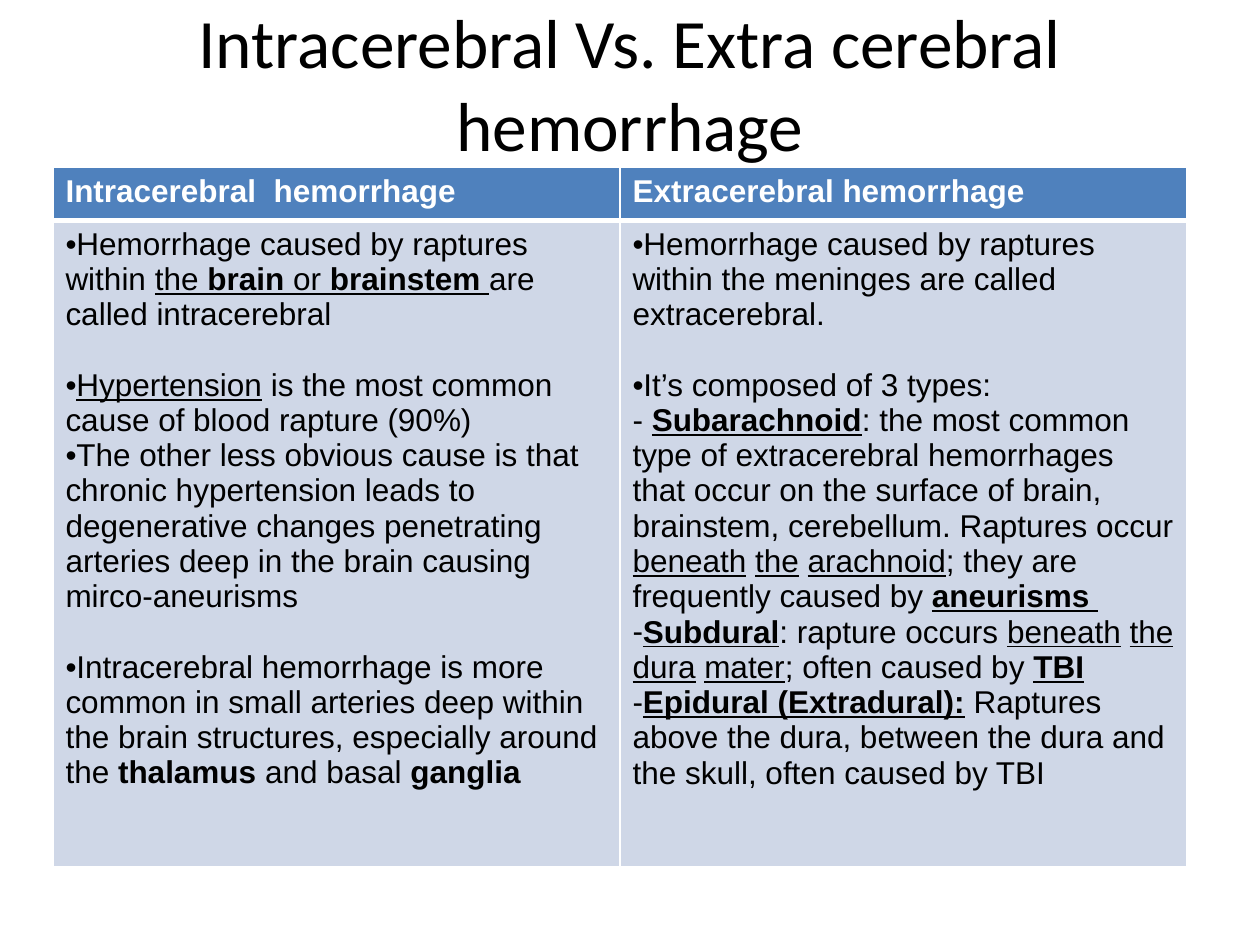
from lxml import etree
from pptx import Presentation
from pptx.dml.color import RGBColor
from pptx.enum.text import MSO_ANCHOR, PP_ALIGN
from pptx.oxml.ns import qn
from pptx.util import Inches, Pt

CENTER, MIDDLE = PP_ALIGN.CENTER, MSO_ANCHOR.MIDDLE
BLACK = RGBColor(0, 0, 0)
WHITE = RGBColor(255, 255, 255)
BLUE = RGBColor(0x4F, 0x81, 0xBD)
PALE = RGBColor(0xCF, 0xD7, 0xE7)

TITLE = "Intracerebral Vs. Extra cerebral hemorrhage"
HEADERS = ["Intracerebral  hemorrhage", "Extracerebral hemorrhage"]

# Each paragraph: bullet, gap before in points, runs of (text, style letters)
INTRACEREBRAL = [
    ("•", 0, [("Hemorrhage caused by raptures within ", ""), ("the ", "u"),
              ("brain", "bu"), (" or ", "u"), ("brainstem", "bu"), (" ", "u"),
              ("are called intracerebral", "")]),
    ("•", 20, [("Hypertension", "u"),
               (" is the most common cause of blood rapture (90%)", "")]),
    ("•", 0, [("The other less obvious cause is that chronic hypertension leads to "
               "degenerative changes penetrating arteries deep in the brain causing "
               "mirco-aneurisms", "")]),
    ("•", 20, [("Intracerebral hemorrhage is more common in small arteries deep within "
                "the brain structures, especially around the ", ""),
               ("thalamus", "b"), (" and basal ", ""), ("ganglia", "b")]),
]
EXTRACEREBRAL = [
    ("•", 0, [("Hemorrhage caused by raptures within the meninges are called "
               "extracerebral.", "")]),
    ("•", 20, [("It’s composed of 3 types:", ""), ("\n", ""), ("- ", ""),
               ("Subarachnoid", "bu"),
               (": the most common type of extracerebral hemorrhages that occur on the "
                "surface of brain, brainstem, cerebellum. Raptures occur ", ""),
               ("beneath", "u"), (" ", ""), ("the", "u"), (" ", ""), ("arachnoid", "u"),
               ("; they are frequently caused by ", ""), ("aneurisms ", "bu")]),
    ("-", 0, [("Subdural", "bu"), (": rapture occurs ", ""), ("beneath", "u"), (" ", ""),
              ("the", "u"), (" ", ""), ("dura", "u"), (" ", ""), ("mater", "u"),
              ("; often caused by ", ""), ("TBI", "bu")]),
    ("-", 0, [("Epidural (Extradural):", "bu"),
              (" Raptures above the dura, between the dura and the skull, often caused "
               "by TBI", "")]),
]
ROW_HEIGHTS = [0.42, 5.13]
COLUMN_WIDTH = 4.5


def style(font, name, size, color, letters=""):
    font.name, font.size, font.color.rgb = name, Pt(size), color
    font.bold, font.underline = "b" in letters, "u" in letters


def set_cell(cell, fill, top, bottom):
    tc_pr = cell._tc.get_or_add_tcPr()
    for side, width in (("L", 1), ("R", 1), ("T", top), ("B", bottom)):
        line = etree.SubElement(tc_pr, qn(f"a:ln{side}"), w=str(Pt(width)))
        solid = etree.SubElement(line, qn("a:solidFill"))
        etree.SubElement(solid, qn("a:srgbClr"), val=str(WHITE))
    cell.fill.solid()
    cell.fill.fore_color.rgb = fill


def add_bullet(p, char):
    p_pr = p._p.get_or_add_pPr()
    p_pr.set("marL", "0")
    p_pr.set("indent", str(Inches(-0.12)))
    color = etree.SubElement(p_pr, qn("a:buClr"))
    etree.SubElement(color, qn("a:srgbClr"), val=str(BLACK))
    etree.SubElement(p_pr, qn("a:buFont"), typeface="Arial")
    etree.SubElement(p_pr, qn("a:buChar"), char=char)


def write_body(tf, paragraphs):
    for i, (bullet, gap, runs) in enumerate(paragraphs):
        p = tf.add_paragraph() if i else tf.paragraphs[0]
        add_bullet(p, bullet)
        if gap:
            p.space_before = Pt(gap)
        for text, letters in runs:
            if text == "\n":
                p.add_line_break()
                continue
            r = p.add_run()
            r.text = text
            style(r.font, "Arial", 18, BLACK, letters)


prs = Presentation()
prs.slide_width, prs.slide_height = Inches(10), Inches(7.5)
s = prs.slides.add_slide(prs.slide_layouts[6])

tf = s.shapes.add_textbox(Inches(0.5), Inches(0.3), Inches(9), Inches(0.7)).text_frame
tf.word_wrap = True
tf.vertical_anchor = MIDDLE
tf.text = TITLE
tf.paragraphs[0].alignment = CENTER
style(tf.paragraphs[0].runs[0].font, "Calibri", 39.6, BLACK)

table = s.shapes.add_table(2, 2, Inches(0.42), Inches(1.33), Inches(2 * COLUMN_WIDTH),
                           Inches(sum(ROW_HEIGHTS))).table
for row, height in zip(table.rows, ROW_HEIGHTS):
    row.height = Inches(height)
for c, (header, body) in enumerate(zip(HEADERS, (INTRACEREBRAL, EXTRACEREBRAL))):
    table.columns[c].width = Inches(COLUMN_WIDTH)
    head, cell = table.cell(0, c), table.cell(1, c)
    set_cell(head, BLUE, 1, 3)
    set_cell(cell, PALE, 3, 1)
    head.text_frame.text = header
    style(head.text_frame.paragraphs[0].runs[0].font, "Arial", 18, WHITE, "b")
    write_body(cell.text_frame, body)

prs.save("out.pptx")
